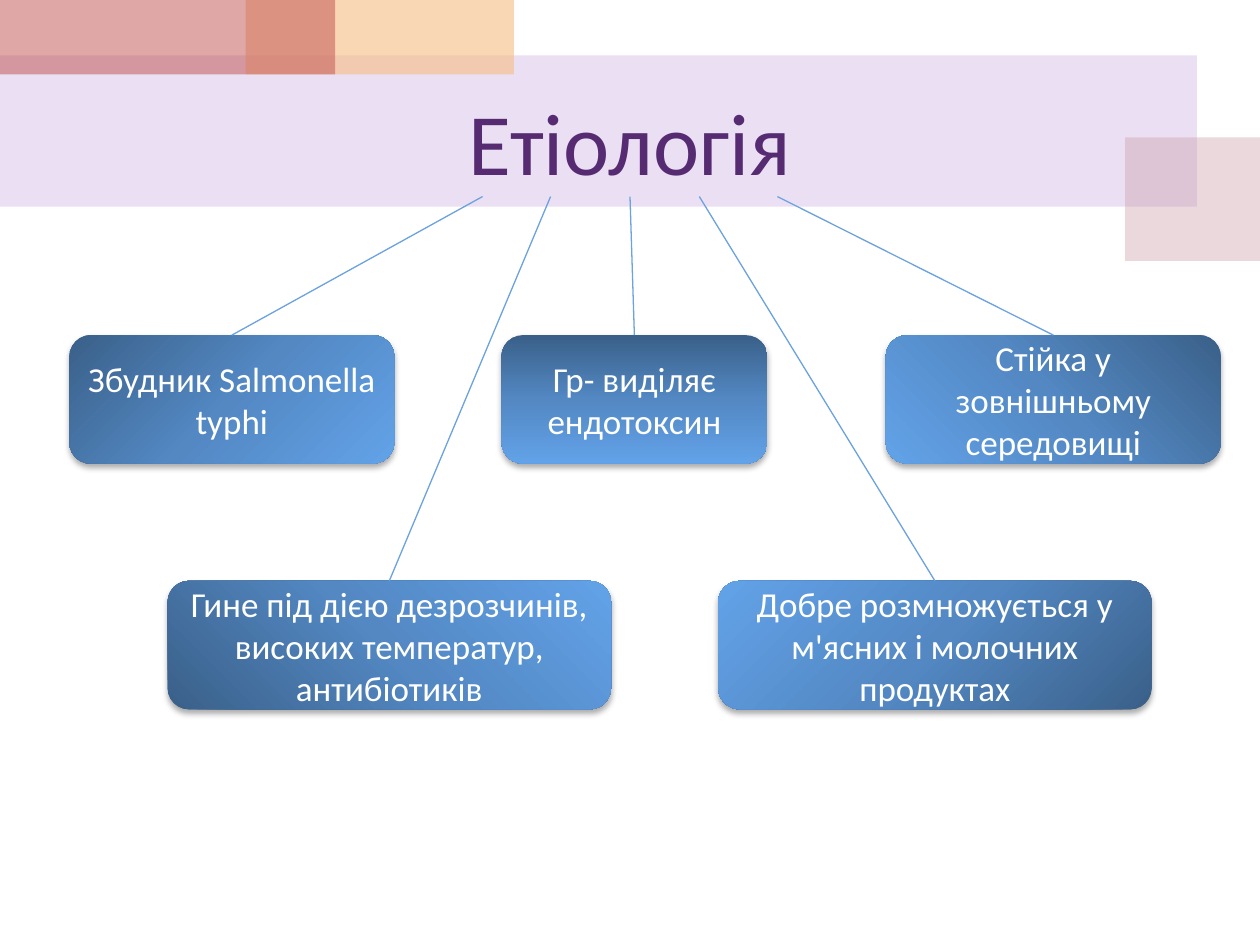
from dataclasses import dataclass

from lxml import etree
from pptx import Presentation
from pptx.dml.color import RGBColor
from pptx.enum.shapes import MSO_CONNECTOR, MSO_SHAPE
from pptx.enum.text import MSO_ANCHOR, PP_ALIGN
from pptx.oxml.ns import qn
from pptx.util import Inches, Pt

RECT = MSO_SHAPE.RECTANGLE
ROUND = MSO_SHAPE.ROUNDED_RECTANGLE
LINE = MSO_CONNECTOR.STRAIGHT
CENTER = PP_ALIGN.CENTER
MIDDLE = MSO_ANCHOR.MIDDLE

STOPS = ((0, "3A6089"), (50, "5388C3"), (100, "62A2E8"))
RAY = "6BA2DF"
HEIGHT = 1.02
START = 1.56
UPPER, LOWER = 2.66, 4.61


@dataclass
class Band:
    left: float
    top: float
    width: float
    height: float
    color: str
    alpha: int


@dataclass
class Fact:
    text: str
    left: float
    top: float
    width: float
    angle: int
    start: float


BANDS = [
    Band(0, 0.44, 9.5, 1.2, "BF98D8", 30),
    Band(8.93, 1.09, 1.07, 0.98, "CC9EAC", 40),
    Band(1.95, 0, 2.13, 0.59, "F5BC83", 60),
    Band(0, 0, 2.66, 0.59, "C0504D", 50),
]

FACTS = [
    Fact("Збудник Salmonella typhi", 0.55, UPPER, 2.58, 45, 3.83),
    Fact("Гр- виділяє ендотоксин", 3.98, UPPER, 2.11, 90, 5),
    Fact("Стійка у зовнішньому середовищі", 7.03, UPPER, 2.66, 135, 6.17),
    Fact("Добре розмножується у м'ясних і молочних продуктах",
         5.7, LOWER, 3.44, 225, 5.55),
    Fact("Гине під дією дезрозчинів, високих температур, антибіотиків",
         1.33, LOWER, 3.52, 315, 4.37),
]


def rgb(color: str) -> RGBColor:
    return RGBColor.from_string(color)


def add(node, tag: str, **attrs):
    return etree.SubElement(node, qn(tag), {k: str(v) for k, v in attrs.items()})


def tint(node, color: str, alpha: int = 100) -> None:
    tone = add(node, "a:srgbClr", val=color)
    if alpha < 100:
        add(tone, "a:alpha", val=alpha * 1000)


def write(shape, text: str, *, size: float, color: str) -> None:
    frame = shape.text_frame
    frame.word_wrap = True
    frame.vertical_anchor = MIDDLE
    para = frame.paragraphs[0]
    para.alignment = CENTER
    run = para.add_run()
    run.text = text
    run.font.name = "Calibri"
    run.font.size = Pt(size)
    run.font.color.rgb = rgb(color)


def block(slide, kind, left: float, top: float, width: float, height: float):
    shape = slide.shapes.add_shape(
        kind, Inches(left), Inches(top), Inches(width), Inches(height))
    shape.shadow.inherit = False
    shape.line.fill.background()
    return shape


def draw_band(slide, band: Band) -> None:
    shape = block(slide, RECT, band.left, band.top, band.width, band.height)
    shape.fill.solid()
    shape.fill.fore_color.rgb = rgb(band.color)
    tone = shape._element.spPr.find(qn("a:solidFill"))[0]
    add(tone, "a:alpha", val=band.alpha * 1000)


def draw_fact(slide, fact: Fact) -> None:
    shape = block(slide, ROUND, fact.left, fact.top, fact.width, HEIGHT)
    props = shape._element.spPr
    shape.fill.gradient()
    grad = props.find(qn("a:gradFill"))
    for child in list(grad):
        grad.remove(child)
    stops = add(grad, "a:gsLst")
    for pos, color in STOPS:
        tint(add(stops, "a:gs", pos=pos * 1000), color)
    add(grad, "a:lin", ang=fact.angle * 60000, scaled=0)
    shade = add(props.find(qn("a:effectLst")), "a:outerShdw",
                blurRad=Pt(3.5), dist=Pt(2.2), dir=90 * 60000, rotWithShape=0)
    tint(shade, "000000", 32)
    write(shape, fact.text, size=20, color="FFFFFF")


def draw_ray(slide, fact: Fact) -> None:
    mid = fact.left + fact.width / 2
    ray = slide.shapes.add_connector(
        LINE, Inches(fact.start), Inches(START), Inches(mid), Inches(fact.top))
    ray.line.color.rgb = rgb(RAY)
    ray.line.width = Pt(0.75)
    add(ray._element.spPr, "a:effectLst")


def main() -> None:
    deck = Presentation()
    deck.slide_width, deck.slide_height = Inches(10), Inches(7.5)
    slide = deck.slides.add_slide(deck.slide_layouts[6])
    for band in BANDS:
        draw_band(slide, band)
    title = slide.shapes.add_textbox(
        Inches(0.5), Inches(0.59), Inches(9), Inches(1.05))
    write(title, "Етіологія", size=50, color="562B71")
    for fact in FACTS:
        draw_fact(slide, fact)
    for fact in FACTS:
        draw_ray(slide, fact)
    deck.save("out.pptx")


if __name__ == "__main__":
    main()
